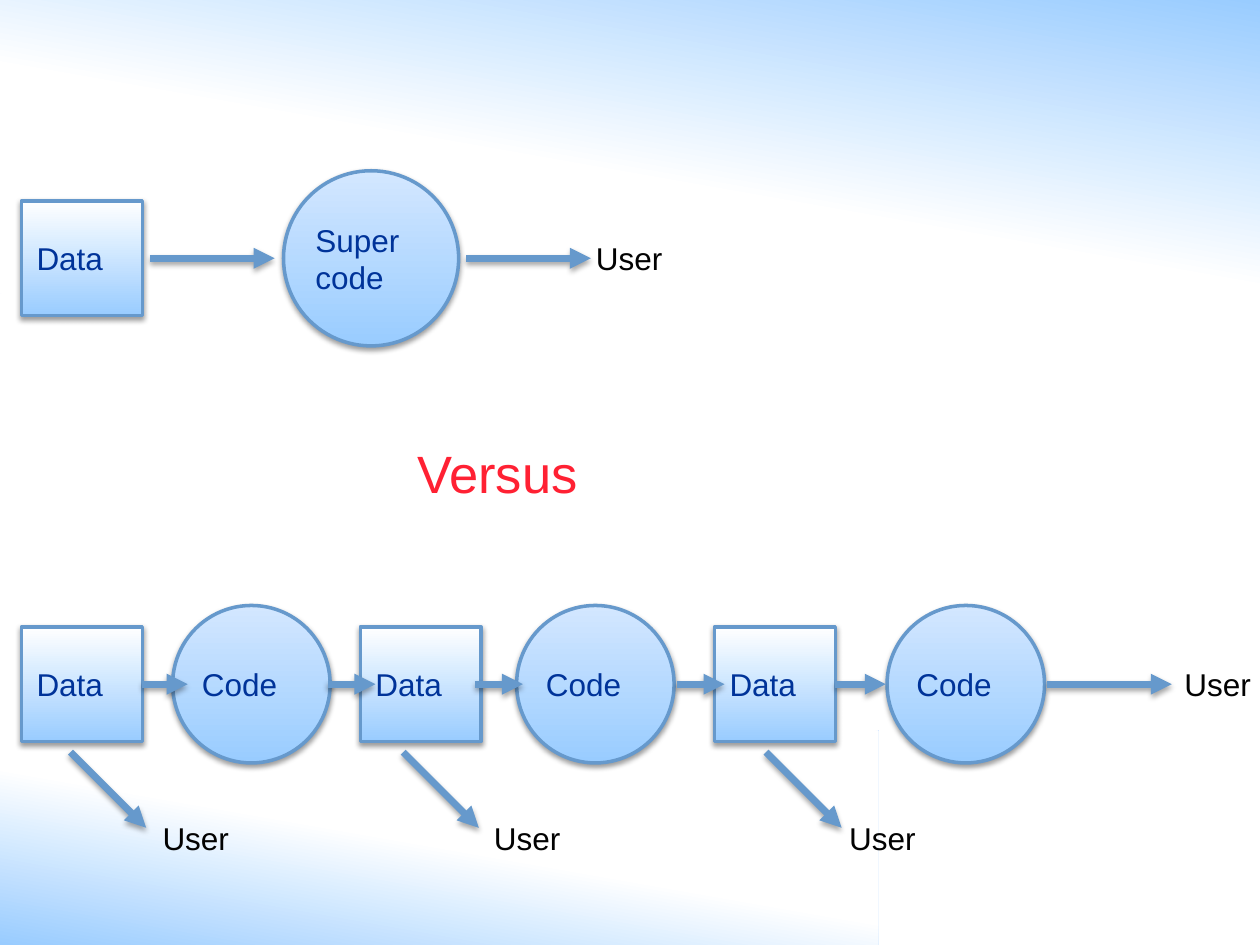
from typing import NamedTuple, Optional

from lxml.etree import SubElement
from pptx import Presentation
from pptx.dml.color import RGBColor
from pptx.enum.shapes import MSO_CONNECTOR, MSO_SHAPE
from pptx.enum.text import MSO_ANCHOR, MSO_AUTO_SIZE, PP_ALIGN
from pptx.oxml.ns import qn
from pptx.util import Inches, Pt

SKY = RGBColor(0x99, 0xCC, 0xFF)
PALE = RGBColor(0xD3, 0xE7, 0xFF)
WHITE = RGBColor(0xFF, 0xFF, 0xFF)
STEEL = RGBColor(0x66, 0x99, 0xCC)
NAVY = RGBColor(0x00, 0x33, 0x99)
INK = RGBColor(0x02, 0x02, 0x02)
RED = RGBColor(0xFF, 0x21, 0x33)

FONT = "Arial"
INSET = 0.05
BOX_WIDTH, BOX_HEIGHT = 0.96, 0.91
TOP_AXIS, BOTTOM_AXIS = 2.05, 5.43
SHORT, LONG, DIAGONAL = 0.38, 0.99, 0.6


class Band(NamedTuple):
    top: float
    width: float
    height: float
    white_at: float
    angle: float


class Node(NamedTuple):
    text: str
    left: float
    axis: float
    width: float
    height: float
    kind: MSO_SHAPE
    light: RGBColor
    indent: float = 0


class Arrow(NamedTuple):
    left: float
    top: float
    width: float
    drop: float = 0
    source: Optional[int] = None


class Label(NamedTuple):
    text: str
    left: float
    top: float
    width: float = 0.64
    height: float = 0.41
    size: int = 18
    color: RGBColor = INK


def data_box(left: float, axis: float) -> Node:
    return Node("Data", left, axis, BOX_WIDTH, BOX_HEIGHT, MSO_SHAPE.RECTANGLE, WHITE, 0.07)


def code_circle(text: str, left: float, axis: float, size: float) -> Node:
    return Node(text, left, axis, size, size, MSO_SHAPE.OVAL, PALE)


BANDS = [Band(5.8, 6.97, 1.7, 0.48, 80), Band(0, 10, 2.33, 0.56, 260)]
NODES = [
    data_box(0.17, TOP_AXIS),
    *(data_box(left, BOTTOM_AXIS) for left in (0.17, 2.86, 5.67)),
    code_circle("Super code", 2.25, TOP_AXIS, 1.39),
    *(code_circle("Code", left, BOTTOM_AXIS, 1.25) for left in (1.37, 4.1, 7.04)),
]
ARROWS = [
    Arrow(1.19, TOP_AXIS, LONG),
    Arrow(3.7, TOP_AXIS, LONG),
    Arrow(1.11, BOTTOM_AXIS, SHORT, source=1),
    Arrow(6.65, BOTTOM_AXIS, SHORT, source=3),
    *(Arrow(left, BOTTOM_AXIS, SHORT) for left in (5.37, 3.77, 2.6)),
    Arrow(8.31, BOTTOM_AXIS, LONG),
    *(Arrow(left, 5.97, DIAGONAL, DIAGONAL) for left in (0.56, 3.2, 6.08)),
]
LABELS = [
    Label("User", 4.68, 1.85),
    Label("User", 9.35, 5.23),
    *(Label("User", left, 6.45) for left in (1.24, 3.87, 6.69)),
    Label("Versus", 3.26, 3.45, 1.39, 0.6, 30, RED),
]


def fill_gradient(shape, end_color: RGBColor, end_at: float, angle: float) -> None:
    shape.fill.gradient()
    shape.fill.gradient_angle = angle
    first, last = shape.fill.gradient_stops
    first.color.rgb, first.position = SKY, 0
    last.color.rgb, last.position = end_color, end_at


def add_shadow(effects, opacity: int, distance: float) -> None:
    shadow = SubElement(
        effects, qn("a:outerShdw"), blurRad=str(Pt(3)), dist=str(Pt(distance)),
        dir="5400000", rotWithShape="0",
    )
    color = SubElement(shadow, qn("a:srgbClr"), val="000000")
    SubElement(color, qn("a:alpha"), val=str(opacity * 1000))


def write_text(frame, text: str, size: int, color: RGBColor, indent: float = 0) -> None:
    frame.margin_left = Inches(INSET + indent)
    frame.margin_right = frame.margin_top = frame.margin_bottom = Inches(INSET)
    frame.text = text
    paragraph = frame.paragraphs[0]
    paragraph.alignment = PP_ALIGN.LEFT
    font = paragraph.runs[0].font
    font.name, font.size, font.color.rgb = FONT, Pt(size), color


def draw_band(slide, band: Band) -> None:
    shape = slide.shapes.add_shape(
        MSO_SHAPE.RECTANGLE, 0, Inches(band.top), Inches(band.width), Inches(band.height)
    )
    fill_gradient(shape, WHITE, band.white_at, band.angle)
    shape.line.fill.background()
    shape.shadow.inherit = False


def draw_node(slide, node: Node):
    shape = slide.shapes.add_shape(
        node.kind, Inches(node.left), Inches(node.axis - node.height / 2),
        Inches(node.width), Inches(node.height),
    )
    fill_gradient(shape, node.light, 1, 90)
    shape.line.color.rgb = STEEL
    shape.line.width = Pt(2)
    shape.shadow.inherit = False
    add_shadow(shape.element.spPr.find(qn("a:effectLst")), 38, 1.6)
    shape.text_frame.word_wrap = True
    shape.text_frame.vertical_anchor = MSO_ANCHOR.MIDDLE
    write_text(shape.text_frame, node.text, 18, NAVY, node.indent)
    return shape


def draw_arrow(slide, arrow: Arrow, nodes: list) -> None:
    connector = slide.shapes.add_connector(
        MSO_CONNECTOR.STRAIGHT, Inches(arrow.left), Inches(arrow.top),
        Inches(arrow.left + arrow.width), Inches(arrow.top + arrow.drop),
    )
    if arrow.source is not None:
        connector.begin_connect(nodes[arrow.source], 3)
    connector.line.color.rgb = STEEL
    connector.line.width = Pt(4)
    properties = connector.element.spPr
    SubElement(properties.find(qn("a:ln")), qn("a:tailEnd"), type="triangle")
    add_shadow(SubElement(properties, qn("a:effectLst")), 35, 1.8)


def draw_label(slide, label: Label) -> None:
    box = slide.shapes.add_textbox(
        Inches(label.left), Inches(label.top), Inches(label.width), Inches(label.height)
    )
    box.text_frame.word_wrap = False
    box.text_frame.auto_size = MSO_AUTO_SIZE.SHAPE_TO_FIT_TEXT
    write_text(box.text_frame, label.text, label.size, label.color)


def main() -> None:
    presentation = Presentation()
    presentation.slide_width, presentation.slide_height = Inches(10), Inches(7.5)
    slide = presentation.slides.add_slide(presentation.slide_layouts[6])
    for band in BANDS:
        draw_band(slide, band)
    nodes = [draw_node(slide, node) for node in NODES]
    for arrow in ARROWS:
        draw_arrow(slide, arrow, nodes)
    for label in LABELS:
        draw_label(slide, label)
    presentation.save("out.pptx")


if __name__ == "__main__":
    main()
